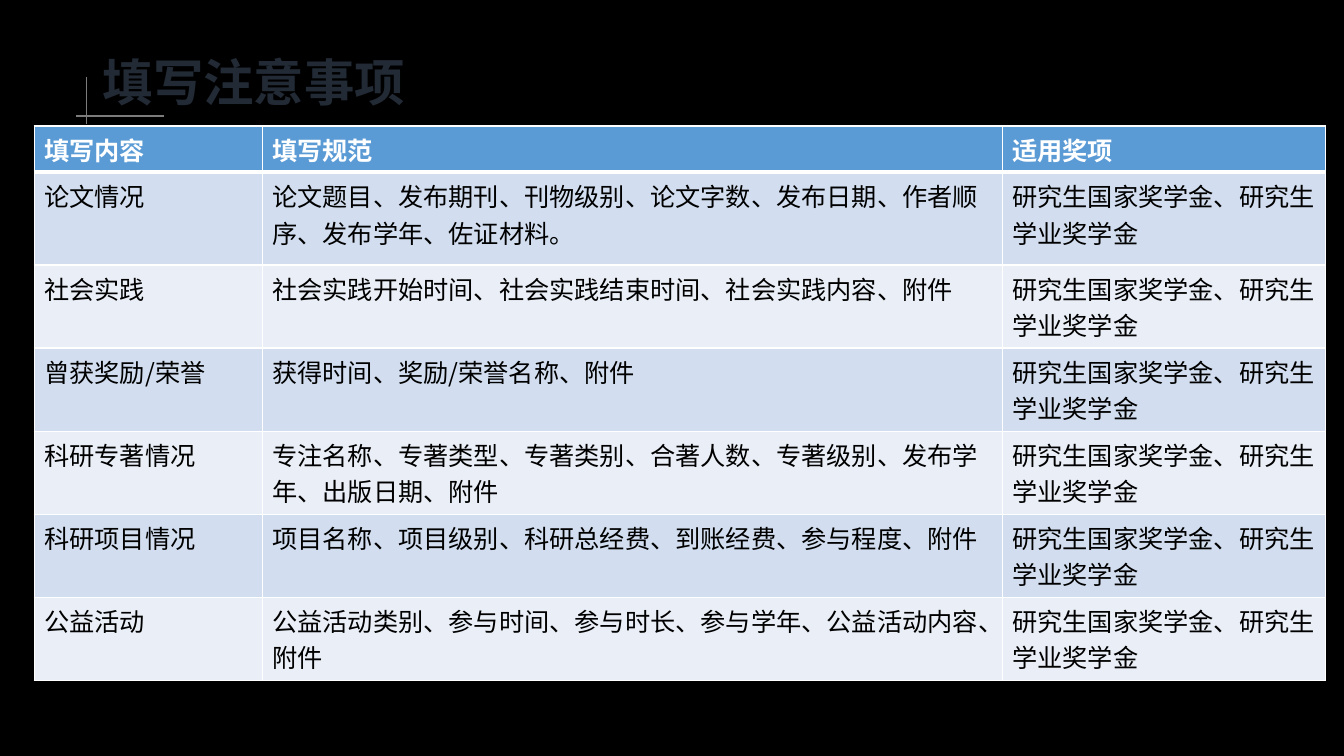
from lxml import etree
from pptx import Presentation
from pptx.dml.color import RGBColor
from pptx.enum import shapes, text
from pptx.oxml.ns import qn
from pptx.util import Inches, Pt

FONT = "Noto Sans CJK SC"
BLACK = RGBColor(0x00, 0x00, 0x00)
WHITE = RGBColor(0xFF, 0xFF, 0xFF)
NAVY = RGBColor(0x22, 0x2A, 0x35)
GRAY = RGBColor(0x7C, 0x7C, 0x7C)
BLUE = RGBColor(0x5B, 0x9B, 0xD5)
BANDS = [RGBColor(0xD2, 0xDE, 0xEF), RGBColor(0xEA, 0xEF, 0xF7)]

TITLE = "填写注意事项"
HEAD = ("填写内容", "填写规范", "适用奖项")
AWARD = "研究生国家奖学金、研究生学业奖学金"
ITEMS = [
    ("论文情况", "论文题目、发布期刊、刊物级别、论文字数、发布日期、作者顺序、发布学年、佐证材料。"),
    ("社会实践", "社会实践开始时间、社会实践结束时间、社会实践内容、附件"),
    ("曾获奖励/荣誉", "获得时间、奖励/荣誉名称、附件"),
    ("科研专著情况", "专注名称、专著类型、专著类别、合著人数、专著级别、发布学年、出版日期、附件"),
    ("科研项目情况", "项目名称、项目级别、科研总经费、到账经费、参与程度、附件"),
    ("公益活动", "公益活动类别、参与时间、参与时长、参与学年、公益活动内容、附件"),
]
ROWS = [HEAD] + [(*item, AWARD) for item in ITEMS]
WIDTHS = [2.26, 7.34, 3.21]
TALL = 5.5
FIRST = [0.46, 0.92]
REST = len(ROWS) - len(FIRST)
HEIGHTS = FIRST + [(TALL - sum(FIRST)) / REST] * REST
RULES = [(0.86, 0.76, 0.86, 1.23), (1.63, 1.15, 0.75, 1.15)]


def style(para, size, color, bold):
    font = para.font
    font.size, font.bold, font.name = Pt(size), bold, FONT
    font.color.rgb = color
    props = para._p.pPr.find(qn("a:defRPr"))
    etree.SubElement(props, qn("a:ea"), typeface=FONT)


def edge(cell, low):
    """Draw white cell borders; low is the bottom width in points."""
    props = cell._tc.get_or_add_tcPr()
    sides = [("L", 1), ("R", 1), ("T", 1), ("B", low)]
    for spot, (side, wide) in enumerate(sides):
        line = etree.Element(qn("a:ln" + side), w=str(Pt(wide)))
        fill = etree.SubElement(line, qn("a:solidFill"))
        etree.SubElement(fill, qn("a:srgbClr"), val=str(WHITE))
        props.insert(spot, line)


def main():
    prs = Presentation()
    prs.slide_width, prs.slide_height = Inches(13.33), Inches(7.5)
    slide = prs.slides.add_slide(prs.slide_layouts[6])
    slide.background.fill.solid()
    slide.background.fill.fore_color.rgb = BLACK

    for ends in RULES:
        rule = slide.shapes.add_connector(
            shapes.MSO_CONNECTOR.STRAIGHT, *map(Inches, ends))
        rule.line.color.rgb = GRAY
        rule.line.width = Pt(1)
        etree.SubElement(rule._element.spPr, qn("a:effectLst"))

    box = slide.shapes.add_textbox(*map(Inches, (0.92, 0.47, 7.39, 0.75)))
    frame = box.text_frame
    frame.word_wrap = True
    frame.vertical_anchor = text.MSO_ANCHOR.MIDDLE
    frame.text = TITLE
    frame.paragraphs[0].line_spacing = 0.9
    style(frame.paragraphs[0], 36, NAVY, True)

    table = slide.shapes.add_table(
        len(ROWS), len(WIDTHS), Inches(0.34), Inches(1.25),
        Inches(sum(WIDTHS)), Inches(TALL)).table
    for col, width in zip(table.columns, WIDTHS):
        col.width = Inches(width)
    for r, (row, height) in enumerate(zip(ROWS, HEIGHTS)):
        table.rows[r].height = Inches(height)
        top = r == 0
        for c, words in enumerate(row):
            cell = table.cell(r, c)
            cell.text = words
            cell.fill.solid()
            cell.fill.fore_color.rgb = BLUE if top else BANDS[(r - 1) % 2]
            edge(cell, 3 if top else 1)
            style(cell.text_frame.paragraphs[0], 18, WHITE if top else BLACK, top)

    prs.save("out.pptx")


if __name__ == "__main__":
    main()
